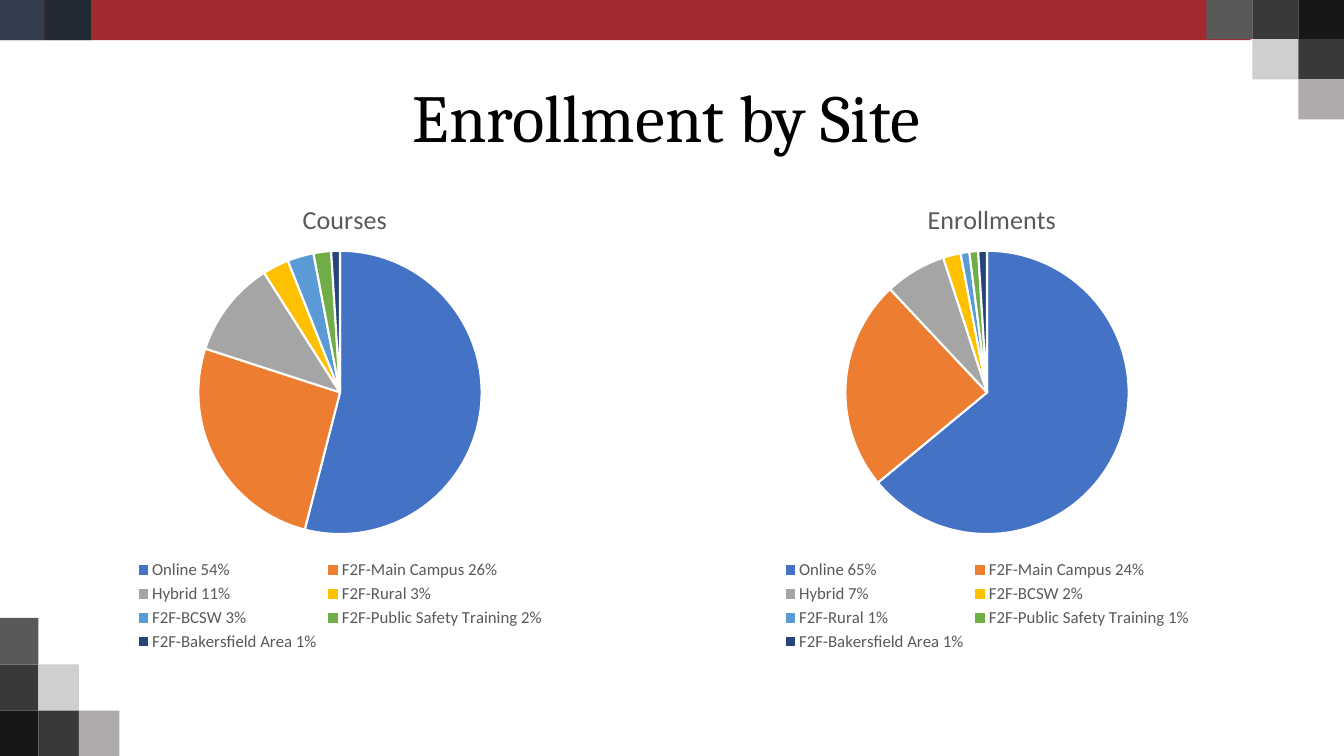
from lxml import etree
from pptx import Presentation
from pptx.chart.data import CategoryChartData
from pptx.dml.color import RGBColor
from pptx.enum.chart import XL_CHART_TYPE, XL_LEGEND_POSITION
from pptx.enum.shapes import MSO_SHAPE
from pptx.enum.text import MSO_ANCHOR, PP_ALIGN
from pptx.oxml.ns import qn
from pptx.util import Cm, Pt

RECTANGLE = MSO_SHAPE.RECTANGLE
PIE = XL_CHART_TYPE.PIE
BOTTOM = XL_LEGEND_POSITION.BOTTOM
MIDDLE = MSO_ANCHOR.MIDDLE
CENTER = PP_ALIGN.CENTER

SLICE_COLORS = ["4472C4", "ED7D31", "A5A5A5", "FFC000", "5B9BD5", "70AD47", "264478"]
TEXT_GRAY = "595959"
PIE_DIAMETER = 7.14
PIE_TOP = 1.93
TITLE_TOP = 0.55
COURSES = [("Online", 54, 54), ("F2F-Main Campus", 26, 26), ("Hybrid", 11, 11),
           ("F2F-Rural", 3, 3), ("F2F-BCSW", 3, 3),
           ("F2F-Public Safety Training", 2, 2), ("F2F-Bakersfield Area", 1, 1)]
ENROLLMENTS = [("Online", 65, 64), ("F2F-Main Campus", 24, 24), ("Hybrid", 7, 7),
               ("F2F-BCSW", 2, 2), ("F2F-Rural", 1, 1),
               ("F2F-Public Safety Training", 1, 1), ("F2F-Bakersfield Area", 1, 1)]


def color(value):
    """Turn a hex string into a colour."""
    return RGBColor.from_string(value)


def add_block(slide, left, top, width, height, fill):
    """Add a plain filled rectangle, measured in centimetres."""
    block = slide.shapes.add_shape(RECTANGLE, Cm(left), Cm(top), Cm(width), Cm(height))
    block.shadow.inherit = False
    block.fill.solid()
    block.fill.fore_color.rgb = color(fill)
    block.line.fill.background()


def add_tiles(slide, left, top, width, height, rows):
    """Fill a grid of equal tiles, leaving out the cells set to None."""
    for row, fills in enumerate(rows):
        for column, fill in enumerate(fills):
            if fill:
                add_block(slide, left + column * width, top + row * height, width, height, fill)


def add_decoration(slide):
    """Add the top banner and the tiles in the corners."""
    add_block(slide, 0, 0, 31.52, 1.01, "A32B30")
    add_tiles(slide, -0.05, 0, 1.17, 1.01, [["333F50", "222A35"]])
    add_tiles(slide, 30.4, -0.02, 1.16, 1.01, [
        ["595959", "3B3838", "181717"],
        [None, "D0CECE", "3B3838"],
        [None, None, "AFABAB"],
    ])
    add_tiles(slide, -0.05, 15.57, 1.02, 1.17, [
        ["595959", None, None],
        ["3B3838", "D0CECE", None],
        ["181717", "3B3838", "AFABAB"],
    ])


def add_title(slide, left, top, width, height, text):
    """Add the centred slide title."""
    box = slide.shapes.add_textbox(Cm(left), Cm(top), Cm(width), Cm(height))
    frame = box.text_frame
    frame.word_wrap = True
    frame.vertical_anchor = MIDDLE
    paragraph = frame.paragraphs[0]
    paragraph.alignment = CENTER
    paragraph.line_spacing = 0.9
    run = paragraph.add_run()
    run.text = text
    run.font.name = "Cambria"
    run.font.size = Pt(48)
    run.font.color.rgb = color("000000")


def set_layout(parent, index, **settings):
    """Give a chart part a manual layout in fractions of the chart."""
    for old_layout in parent.findall(qn("c:layout")):
        parent.remove(old_layout)
    layout = etree.Element(qn("c:layout"))
    manual = etree.SubElement(layout, qn("c:manualLayout"))
    for name, value in settings.items():
        etree.SubElement(manual, qn(f"c:{name}")).set("val", str(value))
    parent.insert(index, layout)


def add_pie(slide, left, top, width, height, title, title_width, sites):
    """Add a titled pie chart with its legend below."""
    data = CategoryChartData()
    data.categories = [f"{site} {percent}%" for site, percent, _ in sites]
    data.add_series("Series 1", [value for _, _, value in sites])
    chart = slide.shapes.add_chart(PIE, Cm(left), Cm(top), Cm(width), Cm(height), data).chart
    chart.font.name = "Calibri"
    chart.font.size = Pt(10)
    chart.font.color.rgb = color("000000")

    chart.has_title = True
    run = chart.chart_title.text_frame.paragraphs[0].add_run()
    run.text = title
    run.font.name = "Calibri"
    run.font.size = Pt(18.6)
    run.font.bold = False
    run.font.color.rgb = color(TEXT_GRAY)

    chart.has_legend = True
    chart.legend.position = BOTTOM
    chart.legend.include_in_layout = False
    chart.legend.font.name = "Calibri"
    chart.legend.font.size = Pt(12)
    chart.legend.font.color.rgb = color(TEXT_GRAY)

    plot = chart.plots[0]
    plot.vary_by_categories = True
    for index, fill in enumerate(SLICE_COLORS):
        slice_format = plot.series[0].points[index].format
        slice_format.fill.solid()
        slice_format.fill.fore_color.rgb = color(fill)
        slice_format.line.color.rgb = color("FFFFFF")
        slice_format.line.width = Pt(1.5)

    chart_element = chart.element.find(qn("c:chart"))
    set_layout(chart_element.find(qn("c:title")), 1, xMode="edge", yMode="edge",
               x=round((1 - title_width / width) / 2, 4), y=round(TITLE_TOP / height, 4))
    set_layout(chart_element.find(qn("c:plotArea")), 0, layoutTarget="inner",
               xMode="edge", yMode="edge",
               x=round((1 - PIE_DIAMETER / width) / 2, 4), y=round(PIE_TOP / height, 4),
               w=round(PIE_DIAMETER / width, 4), h=round(PIE_DIAMETER / height, 4))


def main():
    """Build the enrollment slide and save it."""
    presentation = Presentation()
    presentation.slide_width = Cm(33.87)
    presentation.slide_height = Cm(19.05)
    slide = presentation.slides.add_slide(presentation.slide_layouts[6])
    add_decoration(slide)
    add_title(slide, 1.6, 1.27, 30.4, 3.53, "Enrollment by Site")
    add_pie(slide, 0.76, 4.39, 15.62, 12.14, "Courses", 2.12, COURSES)
    add_pie(slide, 16.38, 4.39, 16.99, 12.14, "Enrollments", 3.23, ENROLLMENTS)
    presentation.save("out.pptx")


if __name__ == "__main__":
    main()
